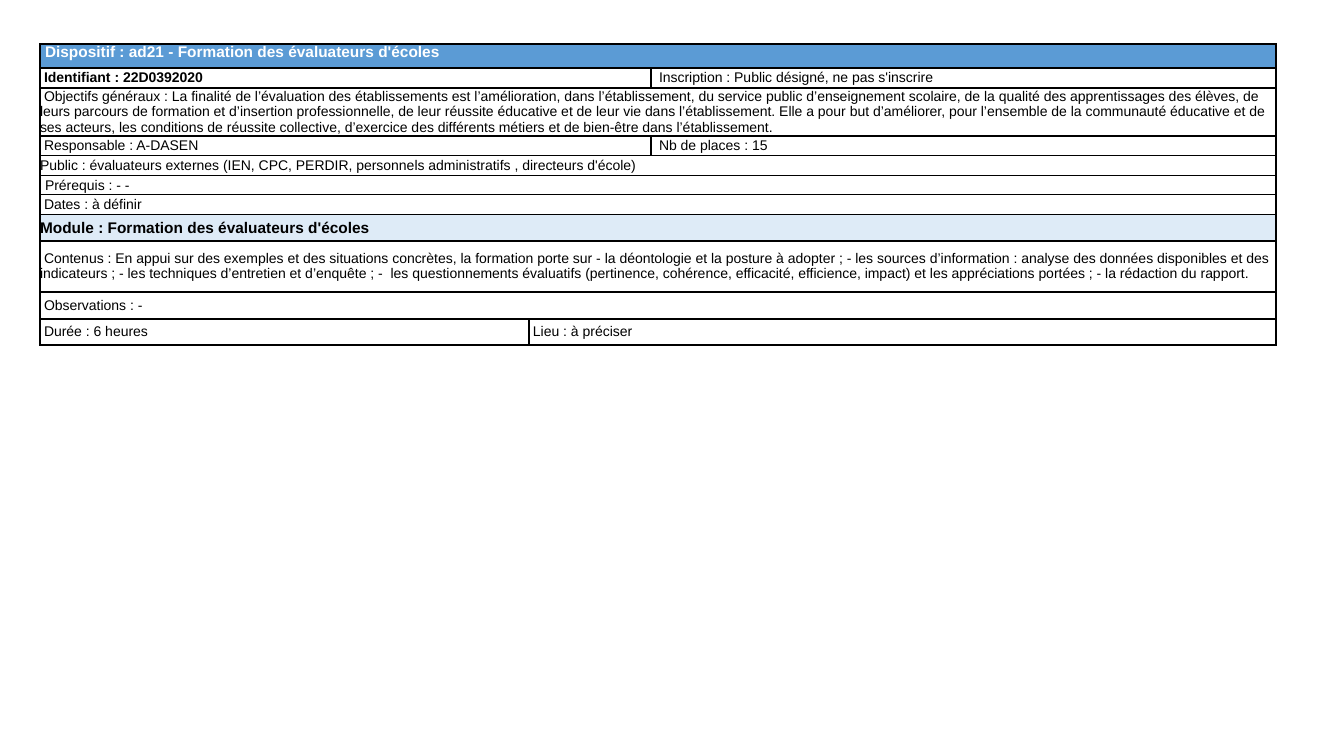
from lxml import etree
from pptx import Presentation
from pptx.dml.color import RGBColor
from pptx.enum.text import MSO_ANCHOR
from pptx.oxml.ns import qn
from pptx.util import Pt

PX = 9071
BLACK = RGBColor(0, 0, 0)
WHITE = RGBColor(255, 255, 255)
BLUE = RGBColor(0x5B, 0x9B, 0xD5)
PALE = RGBColor(0xDE, 0xEB, 0xF7)
TOP, MIDDLE = MSO_ANCHOR.TOP, MSO_ANCHOR.MIDDLE
LEFT = 40

GOALS = (
    "Objectifs généraux : La finalité de l’évaluation des établissements est l’amélioration, "
    "dans l’établissement, du service public d’enseignement scolaire, de la qualité des "
    "apprentissages des élèves, de leurs parcours de formation et d’insertion professionnelle, "
    "de leur réussite éducative et de leur vie dans l’établissement. Elle a pour but "
    "d’améliorer, pour l’ensemble de la communauté éducative et de ses acteurs, les conditions "
    "de réussite collective, d’exercice des différents métiers et de bien-être dans "
    "l’établissement."
)
CONTENT = (
    "Contenus : En appui sur des exemples et des situations concrètes, la formation porte sur "
    "- la déontologie et la posture à adopter ; - les sources d’information : analyse des "
    "données disponibles et des indicateurs ; - les techniques d’entretien et d’enquête ; "
    "-  les questionnements évaluatifs (pertinence, cohérence, efficacité, efficience, impact) "
    "et les appréciations portées ; - la rédaction du rapport."
)

# Each cell: text, then what differs from the base format
BASE = {"size": 10, "bold": False, "color": BLACK, "fill": None, "anchor": MIDDLE,
        "margin": 4, "first": 0, "before": 0, "line": 1.0}
HEAD = {"size": 11, "bold": True, "color": WHITE, "fill": BLUE, "anchor": TOP,
        "margin": 5, "before": 0.9}
MODULE = {"size": 11, "bold": True, "fill": PALE, "margin": 0, "before": 2.2}

# Each table: top, column widths, rows of (height, cells)
TABLES = [
    (44, [611, 625], [
        (24, [("Dispositif : ad21 - Formation des évaluateurs d'écoles", HEAD)]),
        (20, [("Identifiant : 22D0392020", {"bold": True, "before": 2.6}),
              ("Inscription : Public désigné, ne pas s'inscrire", {"margin": 8})]),
        (48, [(GOALS, {"margin": 0, "first": 4, "before": 0.2, "line": Pt(11.3)})]),
        (20, [("Responsable : A-DASEN", {"before": 2.3}),
              ("Nb de places : 15", {"margin": 8})]),
        (20, [("Public : évaluateurs externes (IEN, CPC, PERDIR, personnels administratifs , "
               "directeurs d'école)", {"margin": 0, "before": 0.5})]),
        (19, [("Prérequis : - -", {"margin": 5, "before": 1.3})]),
        (20, [("Dates : à définir", {"before": 1.9})]),
        (26, [("Module : Formation des évaluateurs d'écoles", MODULE)]),
    ]),
    (241, [489, 747], [
        (51, [(CONTENT, {"margin": 0, "first": 4, "before": 0.9, "line": 0.97})]),
        (27, [("Observations : -", {"before": 1.4})]),
        (26, [("Durée : 6 heures", {"before": 1.4}),
              ("Lieu : à préciser", {"before": 1.3})]),
    ]),
]


def frame(cell):
    """Clear the cell's margins and fill, and rule its four sides in black."""
    cell.margin_left = cell.margin_right = cell.margin_top = cell.margin_bottom = 0
    props = cell._tc.get_or_add_tcPr()
    for side in ("lnL", "lnR", "lnT", "lnB"):
        line = etree.SubElement(props, qn(f"a:{side}"), w=str(Pt(1)))
        fill = etree.SubElement(line, qn("a:solidFill"))
        etree.SubElement(fill, qn("a:srgbClr"), val=str(BLACK))
    cell.fill.background()


def write(cell, text, form):
    """Put formatted text in the cell."""
    cell.vertical_anchor = form["anchor"]
    if form["fill"]:
        cell.fill.solid()
        cell.fill.fore_color.rgb = form["fill"]
    para = cell.text_frame.paragraphs[0]
    para.space_before = Pt(form["before"])
    para.line_spacing = form["line"]
    props = para._p.get_or_add_pPr()
    props.set("marL", str(form["margin"] * PX))
    props.set("indent", str(form["first"] * PX))
    run = para.add_run()
    run.text = text
    font = run.font
    font.name = "Arial"
    font.size = Pt(form["size"])
    font.bold = form["bold"]
    font.color.rgb = form["color"]


deck = Presentation()
deck.slide_width, deck.slide_height = 1344 * PX, 756 * PX
slide = deck.slides.add_slide(deck.slide_layouts[6])

for top, widths, rows in TABLES:
    height = sum(row[0] for row in rows)
    table = slide.shapes.add_table(len(rows), len(widths), LEFT * PX, top * PX,
                                   sum(widths) * PX, height * PX).table
    table.first_row = table.horz_banding = False
    for col, width in zip(table.columns, widths):
        col.width = width * PX
    for i, (tall, items) in enumerate(rows):
        table.rows[i].height = tall * PX
        for cell in table.rows[i].cells:
            frame(cell)
        if len(items) == 1:
            table.cell(i, 0).merge(table.cell(i, 1))
        for j, (text, form) in enumerate(items):
            write(table.cell(i, j), text, BASE | form)

deck.save("out.pptx")
